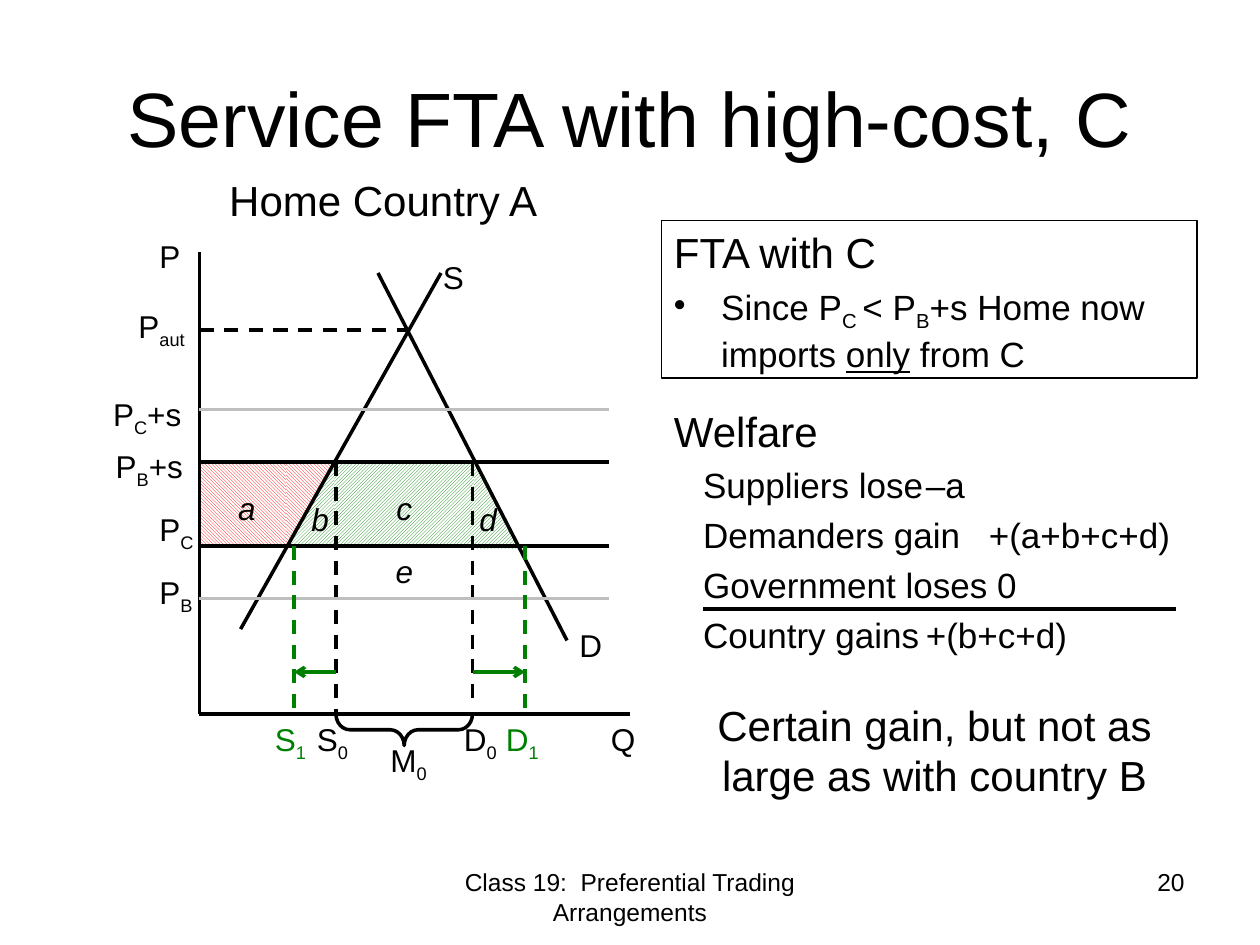
from dataclasses import dataclass

import pptx
import pptx.dml.color
import pptx.enum.dml
import pptx.enum.shapes
import pptx.enum.text
import pptx.oxml
import pptx.oxml.ns
import pptx.util
from lxml import etree

Pt = pptx.util.Pt
Align = pptx.enum.text.PP_ALIGN
Shape = pptx.enum.shapes.MSO_SHAPE
Pattern = pptx.enum.dml.MSO_PATTERN
qn = pptx.oxml.ns.qn


@dataclass(frozen=True)
class Theme:
    font: str = "Arial"
    black: str = "000000"
    white: str = "FFFFFF"
    grey: str = "BFBFBF"
    green: str = "008000"
    red: str = "FF0000"
    title: int = 44
    heading: int = 24
    body: int = 20
    label: int = 18
    footer: int = 14
    line: float = 2
    thin: float = 0.75


THEME = Theme()


def rgb(color):
    return pptx.dml.color.RGBColor.from_string(color)


def style(para, size, color=THEME.black, align=Align.LEFT, italic=False):
    para.alignment = align
    para.font.name = THEME.font
    para.font.size = Pt(size)
    para.font.color.rgb = rgb(color)
    para.font.italic = italic


def add_spans(para, text):
    """Underscores switch between normal and subscript text."""
    for index, piece in enumerate(text.split("_")):
        span = para.add_run()
        span.text = piece
        if index % 2:
            span._r.get_or_add_rPr().set("baseline", "-25000")


def add_text(page, box, text, size, color=THEME.black, align=Align.LEFT, italic=False):
    frame = page.shapes.add_textbox(*map(Pt, box)).text_frame
    frame.word_wrap = True
    if align == Align.LEFT:
        frame.margin_right = 0
    style(frame.paragraphs[0], size, color, align, italic)
    add_spans(frame.paragraphs[0], text)
    return frame


def add_line(page, start, end, color=THEME.black, dashed=False, arrow=False):
    line = page.shapes.add_connector(
        pptx.enum.shapes.MSO_CONNECTOR.STRAIGHT, *map(Pt, (*start, *end)))
    line.line.color.rgb = rgb(color)
    line.line.width = Pt(THEME.line)
    if dashed:
        line.line.dash_style = pptx.enum.dml.MSO_LINE.DASH
    if arrow:
        etree.SubElement(line.line._get_or_add_ln(), qn("a:tailEnd"), type="arrow")
    etree.SubElement(line._element.spPr, qn("a:effectLst"))


def add_area(shapes, kind, box, color, flip=None):
    area = shapes.add_shape(kind, *map(Pt, box))
    area.shadow.inherit = False
    area.line.fill.background()
    area.fill.patterned()
    area.fill.pattern = (Pattern.DARK_DOWNWARD_DIAGONAL if color == THEME.red
                         else Pattern.DARK_UPWARD_DIAGONAL)
    area.fill.fore_color.rgb = rgb(color)
    area.fill.back_color.rgb = rgb(THEME.white)
    if flip:
        area._element.spPr.find(qn("a:xfrm")).set(flip, "1")


def add_panel(page, box, border):
    panel = page.shapes.add_shape(Shape.RECTANGLE, *map(Pt, box))
    panel.shadow.inherit = False
    panel.fill.background()
    panel.line.color.rgb = rgb(border)
    panel.line.width = Pt(THEME.thin)
    panel.text_frame.word_wrap = True
    panel.text_frame.vertical_anchor = pptx.enum.text.MSO_ANCHOR.TOP
    return panel.text_frame


def add_row(frame, text, size, first=False):
    para = frame.paragraphs[0] if first else frame.add_paragraph()
    style(para, size)
    para.space_before = Pt(size * 0.23)
    add_spans(para, text)
    return para


def draw_areas(page, left, top):
    rect, triangle = Shape.RECTANGLE, Shape.RIGHT_TRIANGLE
    gain = page.shapes.add_group_shape().shapes
    loss = page.shapes.add_group_shape().shapes
    for shapes, kind, x, y, width, height, color, flip in (
            (gain, rect, 0, 120, 157, 48, THEME.green, "flipV"),
            (gain, triangle, 157, 121, 26, 47.5, THEME.green, None),
            (loss, rect, 0, 120, 49.5, 48, THEME.red, None),
            (loss, triangle, 49.5, 120, 28, 47.5, THEME.red, "flipV"),
            (page.shapes, triangle, 51.5, 121.5, 26, 46, THEME.green, "flipH"),
            (page.shapes, triangle, 156, 120, 26, 49.5, THEME.green, None),
            (page.shapes, rect, 77, 120, 80, 47.5, THEME.green, None)):
        add_area(shapes, kind, (left + x, top + y, width, height), color, flip)


def draw_diagram(page, box):
    """Supply and demand; the box is the area between the two axes."""
    left, top, width, height = box
    draw_areas(page, left, top)

    def at(x, y):
        return left + x, top + y

    # Axes, demand and supply
    for start, end in (((0, height), (width, height)), ((0, height), (0, 0)),
                       ((210, 222), (102, 12)), ((23.5, 215.5), (138, 12))):
        add_line(page, at(*start), at(*end))

    # Quantities before and after, and the autarky price
    add_line(page, at(0, 44.5), at(120, 44.5), dashed=True)
    add_line(page, at(156, 120), at(156, 258), dashed=True)
    add_line(page, at(78, 120), at(78, height), dashed=True)

    # Prices
    for y, color in ((198, THEME.grey), (168, THEME.black),
                     (120, THEME.black), (90, THEME.grey)):
        add_line(page, at(0, y), at(234, y), color)

    for old, new in ((78, 54), (156, 186)):
        add_line(page, at(new, 168), at(new, height), THEME.green, dashed=True)
        add_line(page, at(old, 240), at(new, 240), THEME.green, arrow=True)

    # Import brace
    brace = page.shapes.add_shape(Shape.LEFT_BRACE, *map(Pt, (*at(108, 234), 18, 78)))
    brace.shadow.inherit = False
    brace.rotation = 270
    brace.adjustments[0] = 0.44
    brace.fill.background()
    brace.line.color.rgb = rgb(THEME.black)
    brace.line.width = Pt(THEME.line)

    # Labels
    for text, x, y, wide, color in (
            ("P", -30, -12, 54, THEME.black), ("S", 132, 0, 54, THEME.black),
            ("P_aut", -42, 28, 54, THEME.black), ("P_C_+s", -56.5, 78, 63, THEME.black),
            ("P_B_+s", -55, 108, 54, THEME.black), ("P_C", -30, 144, 36, THEME.black),
            ("P_B", -30, 180, 36, THEME.black), ("D", 210, 210, 30, THEME.black),
            ("Q", 228, 264, 54, THEME.black), ("S_0", 60, 264, 36, THEME.black),
            ("M_0", 102, 276, 42, THEME.black), ("S_1", 36, 264, 36, THEME.green),
            ("D_1", 168, 264, 36, THEME.green), ("D_0", 144, 264, 36, THEME.black)):
        add_text(page, (*at(x, y), wide, 29), text, THEME.label, color)
    for text, x, y in (("a", 0, 132), ("b", 42, 138), ("c", 90, 132),
                       ("d", 138, 138), ("e", 90, 168)):
        add_text(page, (*at(x, y), 54, 29), text, THEME.label,
                 align=Align.CENTER, italic=True)


def draw_agreement(page, box):
    frame = add_panel(page, box, THEME.black)
    add_row(frame, "FTA with C", THEME.heading, first=True)
    para = add_row(frame, "Since P_C _< P_B_+s Home now imports ", THEME.body)
    only = para.add_run()
    only.text = "only"
    only.font.underline = True
    add_spans(para, " from C")
    props = para._p.get_or_add_pPr()
    props.set("marL", str(Pt(27)))
    props.set("indent", str(Pt(-27)))
    bullet = pptx.oxml.parse_xml(
        '<a:buChar xmlns:a="http://schemas.openxmlformats.org/drawingml/2006/main" char="•"/>')
    props.find(qn("a:defRPr")).addprevious(bullet)


def draw_welfare(page, box):
    left, top, width, height = box
    frame = add_panel(page, box, THEME.white)
    add_row(frame, "Welfare", THEME.heading, first=True)
    for text in ("Suppliers lose\t–a", "Demanders gain\t+(a+b+c+d)",
                 "Government loses 0", "Country gains\t+(b+c+d)"):
        props = add_row(frame, text, THEME.body)._p.get_or_add_pPr()
        props.set("indent", str(Pt(16.7)))
        tabs = etree.Element(qn("a:tabLst"))
        etree.SubElement(tabs, qn("a:tab"), pos=str(Pt(180)), algn="l")
        props.find(qn("a:defRPr")).addprevious(tabs)
    add_line(page, (left + 24, top + 120), (left + 294, top + 120))


def draw_headings(page, box):
    left, top, width, height = box
    title = add_text(page, (left + 36, top + 21.5, width - 72, 90),
                     "Service FTA with high-cost, C", THEME.title, align=Align.CENTER)
    title.vertical_anchor = pptx.enum.text.MSO_ANCHOR.MIDDLE
    for text, x, y, wide, high, size, align in (
            ("Home Country A", 120, 96, 198, 36, THEME.heading, Align.CENTER),
            ("Certain gain, but not as large as with country B",
             396, 396, 276, 65.5, THEME.heading, Align.CENTER),
            ("Class 19:  Preferential Trading Arrangements",
             246, 492, 228, 37.5, THEME.footer, Align.CENTER),
            ("20", 516, 492, 168, 37.5, THEME.footer, Align.RIGHT)):
        add_text(page, (left + x, top + y, wide, high), text, size, align=align)


def main():
    deck = pptx.Presentation()
    deck.slide_width, deck.slide_height = Pt(720), Pt(540)
    page = deck.slides.add_slide(deck.slide_layouts[6])
    draw_diagram(page, (114, 144, 246, 264))
    draw_agreement(page, (378, 126, 306, 90))
    draw_welfare(page, (378, 228, 306, 156))
    draw_headings(page, (0, 0, 720, 540))
    deck.save("out.pptx")


if __name__ == "__main__":
    main()
